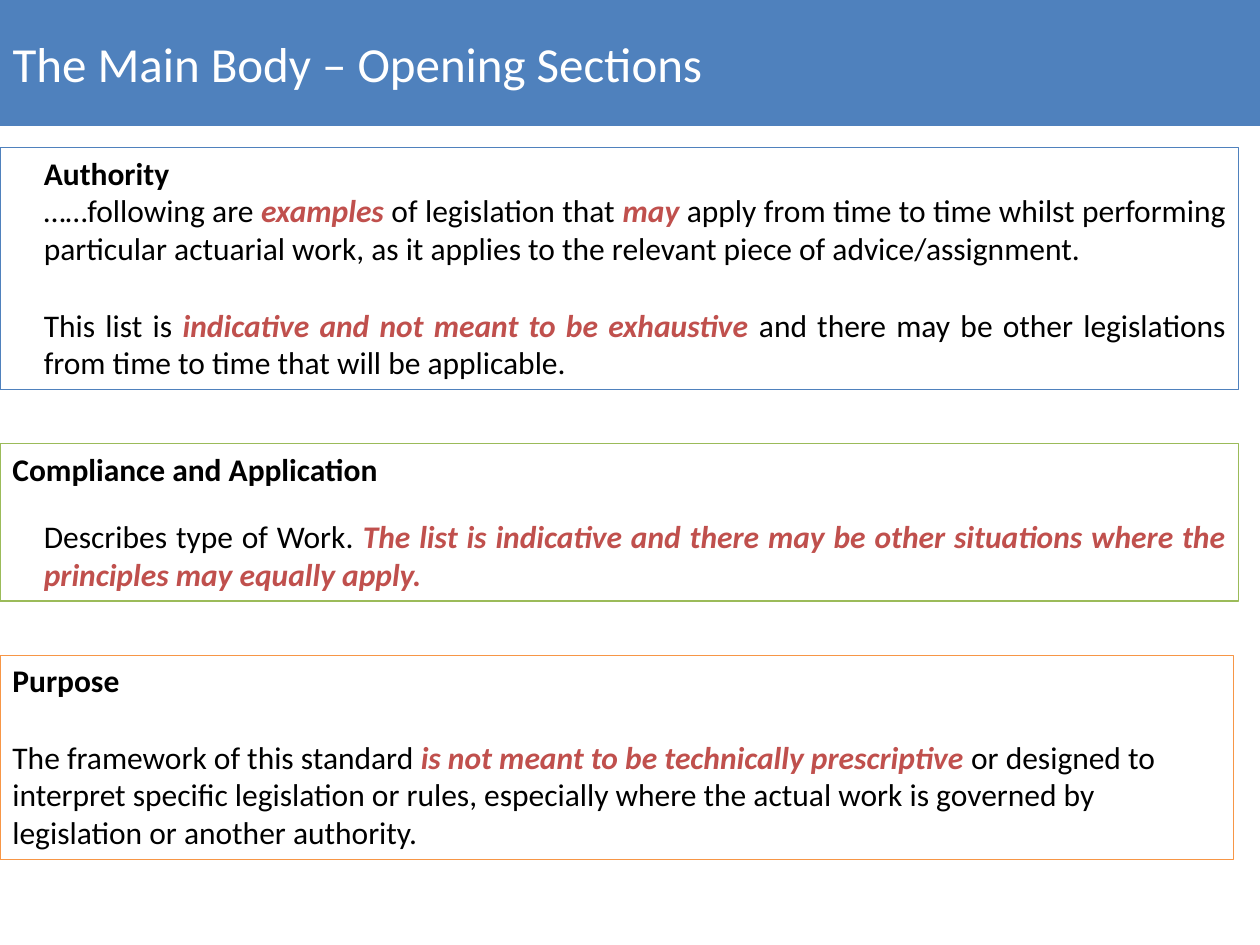
"""Build the slide on the opening sections of the main body."""
from dataclasses import dataclass

from pptx import Presentation
from pptx.dml.color import RGBColor
from pptx.enum.shapes import MSO_SHAPE
from pptx.enum.text import MSO_ANCHOR, MSO_AUTO_SIZE, PP_ALIGN
from pptx.util import Inches, Pt


@dataclass(frozen=True)
class Theme:
    font: str = "Calibri"
    title_size: int = 28
    body_size: int = 18
    banner: str = "4F81BD"
    light: str = "FFFFFF"
    text: str = "000000"
    accent: str = "C0504D"
    line_width: float = 0.75
    indent: float = 0.25


THEME = Theme()
WIDTH, HEIGHT = 10, 7.5
BANNER_HEIGHT = 1
TITLE = "The Main Body – Opening Sections"

# Paragraphs: text with *emphasis*, indented, justified, space before in points.
PANELS = [
    {
        "box": (1.17, 9.83, 1.92),
        "line": "4F81BD",
        "heading": ("Authority", True, True, 0),
        "body": [
            ("……following are *examples *of legislation that *may *apply from time to time "
             "whilst performing particular actuarial work, as it applies to the relevant "
             "piece of advice/assignment.", True, True, 0),
            ("This list is *indicative and not meant to be exhaustive *and there may be other "
             "legislations from time to time that will be applicable.", True, True, 22),
        ],
    },
    {
        "box": (3.52, 9.83, 1.25),
        "line": "9BBB59",
        "heading": ("Compliance and Application", False, False, 0),
        "body": [
            ("Describes type of Work. *The list is indicative and there may be other "
             "situations where the principles may equally apply.*", True, True, 17),
        ],
    },
    {
        "box": (5.2, 9.79, 1.62),
        "line": "F79646",
        "heading": ("Purpose", False, False, 0),
        "body": [
            ("The framework of this standard *is not meant to be technically prescriptive* or "
             "designed to interpret specific legislation or rules, especially where the actual "
             "work is governed by legislation or another authority.", False, False, 22),
        ],
    },
]


def style(span, size, color, bold=False, italic=False):
    """Apply the theme font and the given look to a run."""
    span.font.name = THEME.font
    span.font.size = Pt(size)
    span.font.color.rgb = RGBColor.from_string(color)
    span.font.bold = bold
    span.font.italic = italic


def place(shape, left, top, width, height):
    """Position a shape in inches."""
    shape.left, shape.top = Inches(left), Inches(top)
    shape.width, shape.height = Inches(width), Inches(height)


def add_title(page):
    """Turn the title placeholder into the banner."""
    title = page.shapes.title
    place(title, 0, 0, WIDTH, BANNER_HEIGHT)
    title.fill.solid()
    title.fill.fore_color.rgb = RGBColor.from_string(THEME.banner)
    frame = title.text_frame
    frame.text = TITLE
    frame.auto_size = MSO_AUTO_SIZE.NONE
    frame.vertical_anchor = MSO_ANCHOR.MIDDLE
    para = frame.paragraphs[0]
    para.alignment = PP_ALIGN.LEFT
    style(para.runs[0], THEME.title_size, THEME.light)


def write(para, content, heading=False):
    """Fill a paragraph, with the parts between asterisks emphasised."""
    text, indented, justified, gap = content
    para.alignment = PP_ALIGN.JUSTIFY if justified else PP_ALIGN.LEFT
    para.space_before = Pt(gap)
    if indented:
        properties = para._p.get_or_add_pPr()
        properties.set("marL", str(Inches(THEME.indent)))
        properties.set("indent", "0")
    for index, part in enumerate(text.split("*")):
        if part:
            strong = index % 2 == 1
            span = para.add_run()
            span.text = part
            style(span, THEME.body_size, THEME.accent if strong else THEME.text,
                  bold=heading or strong, italic=strong)


def add_panel(page, panel):
    """Draw an outlined box with its heading and body."""
    top, width, height = panel["box"]
    box = page.shapes.add_shape(MSO_SHAPE.RECTANGLE, 0, 0, 0, 0)
    place(box, 0, top, width, height)
    box.shadow.inherit = False
    box.fill.background()
    box.line.color.rgb = RGBColor.from_string(panel["line"])
    box.line.width = Pt(THEME.line_width)
    frame = box.text_frame
    frame.word_wrap = True
    frame.auto_size = MSO_AUTO_SIZE.SHAPE_TO_FIT_TEXT
    frame.vertical_anchor = MSO_ANCHOR.TOP
    write(frame.paragraphs[0], panel["heading"], heading=True)
    for content in panel["body"]:
        write(frame.add_paragraph(), content)


def main():
    """Create the deck and save it."""
    deck = Presentation()
    deck.slide_width, deck.slide_height = Inches(WIDTH), Inches(HEIGHT)
    page = deck.slides.add_slide(deck.slide_layouts.get_by_name("Title Only"))
    add_title(page)
    for panel in PANELS:
        add_panel(page, panel)
    deck.save("out.pptx")


if __name__ == "__main__":
    main()
